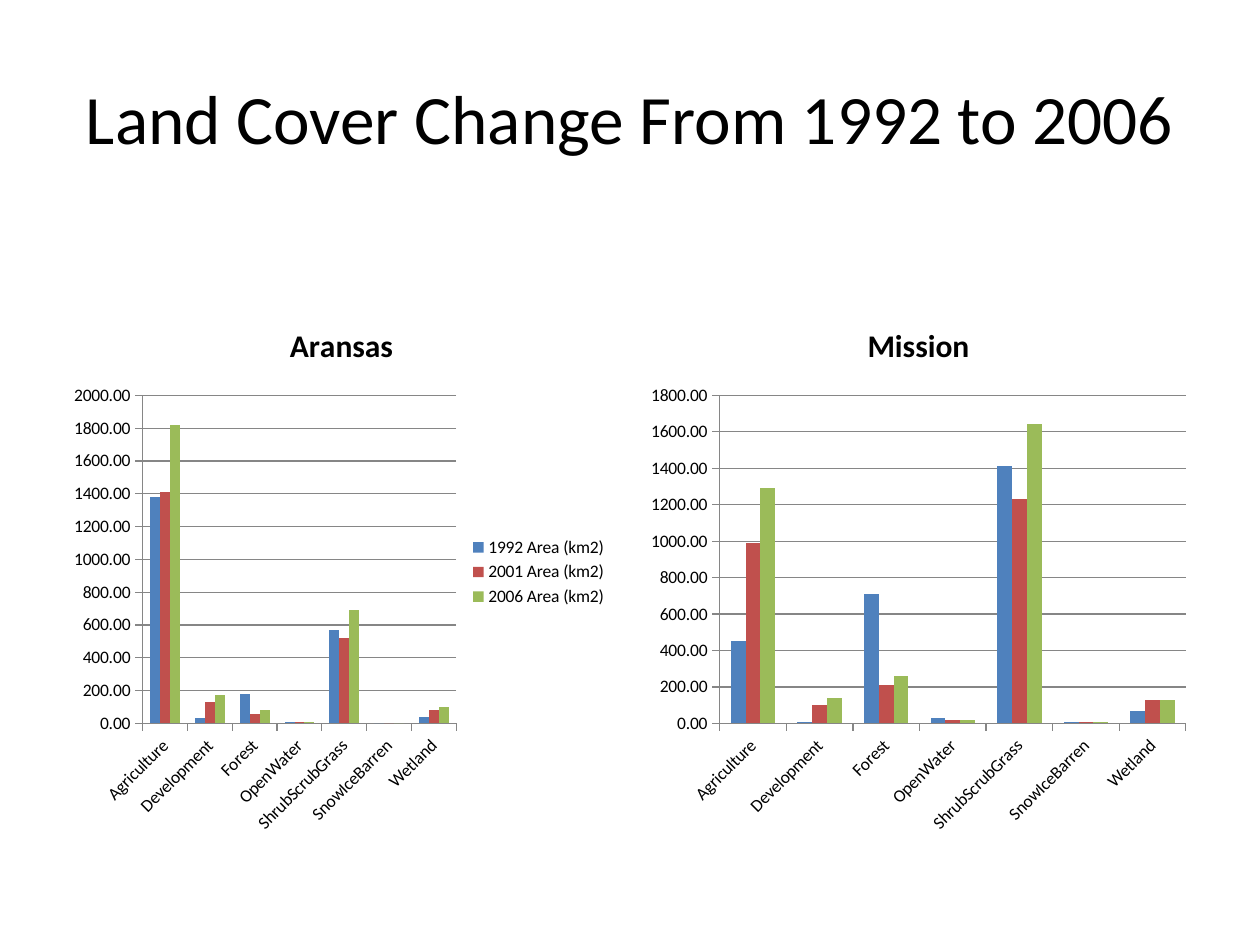
from pptx import Presentation
from pptx.chart.data import CategoryChartData
from pptx.dml.color import RGBColor
from pptx.enum.chart import XL_CHART_TYPE, XL_LEGEND_POSITION, XL_TICK_MARK
from pptx.enum.text import MSO_ANCHOR, PP_ALIGN
from pptx.util import Emu, Pt

PX = 914400 / 126
FONT = "Calibri"
COLORS = {"text": "000000", "line": "868686",
          "1992": "4F81BD", "2001": "C0504D", "2006": "9BBB59"}
YEARS = ["1992", "2001", "2006"]
COVERS = ["Agriculture", "Development", "Forest", "OpenWater",
          "ShrubScrubGrass", "SnowIceBarren", "Wetland"]
ARANSAS = [[1380, 30, 180, 10, 570, 0, 40],
           [1410, 130, 60, 10, 520, 0, 80],
           [1820, 170, 80, 10, 690, 0, 100]]
MISSION = [[450, 10, 710, 30, 1410, 10, 70],
           [990, 100, 210, 20, 1230, 10, 130],
           [1290, 140, 260, 20, 1640, 10, 130]]


def px(n):
    return Emu(round(n * PX))


def rgb(name):
    return RGBColor.from_string(COLORS[name])


def style_font(font, size, bold=False):
    font.name = FONT
    font.size = Pt(size)
    font.bold = bold
    font.color.rgb = rgb("text")


def add_title(slide, box, text):
    tf = slide.shapes.add_textbox(*map(px, box)).text_frame
    tf.word_wrap = True
    tf.vertical_anchor = MSO_ANCHOR.MIDDLE
    p = tf.paragraphs[0]
    p.text = text
    p.alignment = PP_ALIGN.CENTER
    style_font(p.runs[0].font, 39.6)


def add_cover_chart(slide, box, title, names, rows, top, legend):
    data = CategoryChartData(number_format="0.00")
    data.categories = COVERS
    for name, row in zip(names, rows):
        data.add_series(name, row)
    chart = slide.shapes.add_chart(
        XL_CHART_TYPE.COLUMN_CLUSTERED, *map(px, box), data).chart
    style_font(chart.font, 10)

    # Chart title
    chart.has_title = True
    tf = chart.chart_title.text_frame
    tf.text = title
    style_font(tf.paragraphs[0].runs[0].font, 18, bold=True)
    chart.chart_title.include_in_layout = False

    # Legend
    chart.has_legend = legend
    if legend:
        chart.legend.position = XL_LEGEND_POSITION.RIGHT
        chart.legend.include_in_layout = False

    # Axes and gridlines
    values = chart.value_axis
    values.minimum_scale, values.maximum_scale = 0, top
    values.major_unit = 200
    values.has_major_gridlines = True
    values.tick_labels.number_format = "0.00"
    values.tick_labels.number_format_is_linked = False
    for axis in (values, chart.category_axis):
        axis.major_tick_mark = XL_TICK_MARK.OUTSIDE
        axis.format.line.color.rgb = rgb("line")
    values.major_gridlines.format.line.color.rgb = rgb("line")

    # Columns
    plot = chart.plots[0]
    plot.gap_width = 150
    plot.overlap = 0
    plot.vary_by_categories = False
    for year, series in zip(YEARS, plot.series):
        series.format.fill.solid()
        series.format.fill.fore_color.rgb = rgb(year)


def main():
    prs = Presentation()
    prs.slide_width, prs.slide_height = px(1260), px(945)
    slide = prs.slides.add_slide(prs.slide_layouts[6])

    add_title(slide, (63, 38, 1134, 157), "Land Cover Change From 1992 to 2006")
    add_cover_chart(slide, (63, 300, 557, 544), "Aransas",
                    [f"{year} Area (km2)" for year in YEARS],
                    ARANSAS, 2000, legend=True)
    add_cover_chart(slide, (640, 300, 557, 544), "Mission",
                    [f"Series {n}" for n in (1, 2, 3)],
                    MISSION, 1800, legend=False)
    prs.save("out.pptx")


if __name__ == "__main__":
    main()
